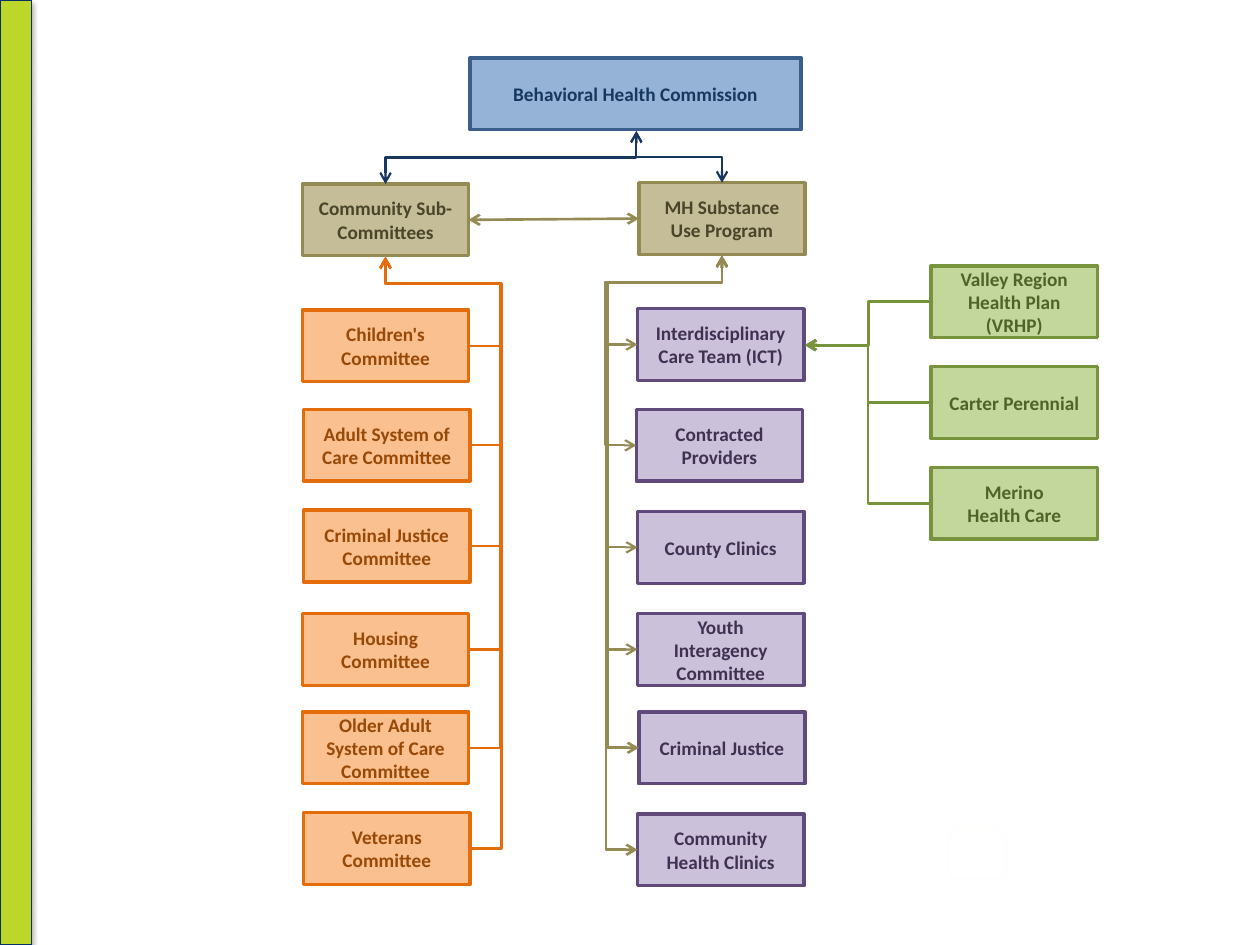
import pptx
import pptx.util
import pptx.dml.color
import pptx.enum.shapes
import pptx.enum.text
import pptx.oxml
import pptx.oxml.ns
import lxml.etree

Inches = pptx.util.Inches
Pt = pptx.util.Pt
RGBColor = pptx.dml.color.RGBColor
SHAPE = pptx.enum.shapes.MSO_SHAPE
CONNECTOR = pptx.enum.shapes.MSO_CONNECTOR
qn = pptx.oxml.ns.qn

WHITE = RGBColor(0xFF, 0xFF, 0xFF)
OFF_WHITE = RGBColor(0xFF, 0xFE, 0xFD)
LIME = RGBColor(0xBC, 0xD6, 0x2A)
DEEP_BLUE = RGBColor(0x05, 0x30, 0x66)
NAVY = RGBColor(0x17, 0x37, 0x5E)
TAN_LINE = RGBColor(0x94, 0x8A, 0x54)
ORANGE_LINE = RGBColor(0xE4, 0x6C, 0x0A)
GREEN_LINE = RGBColor(0x77, 0x93, 0x3C)

BLUE = (RGBColor(0x95, 0xB3, 0xD7), RGBColor(0x3A, 0x5F, 0x8C), NAVY)
TAN = (RGBColor(0xC4, 0xBD, 0x97), TAN_LINE, RGBColor(0x4A, 0x45, 0x2A))
ORANGE = (RGBColor(0xFA, 0xC0, 0x90), ORANGE_LINE, RGBColor(0x98, 0x48, 0x07))
PURPLE = (RGBColor(0xCC, 0xC1, 0xDA), RGBColor(0x60, 0x4A, 0x7B), RGBColor(0x40, 0x31, 0x52))
GREEN = (RGBColor(0xC3, 0xD6, 0x9B), GREEN_LINE, RGBColor(0x4F, 0x62, 0x28))

BOX_W, BOX_H = 1.32, 0.57
STUB = 0.25
DROP = 0.21

deck = pptx.Presentation()
deck.slide_width = Inches(10)
deck.slide_height = Inches(7.5)
slide = deck.slides.add_slide(deck.slide_layouts[6])


def add_box(left, top, lines, scheme, width=BOX_W, tight=False):
    fill, line, ink = scheme
    box = slide.shapes.add_shape(
        SHAPE.RECTANGLE, Inches(left), Inches(top), Inches(width), Inches(BOX_H))
    box.shadow.inherit = False
    box.fill.solid()
    box.fill.fore_color.rgb = fill
    box.line.color.rgb = line
    box.line.width = Pt(2)
    frame = box.text_frame
    frame.word_wrap = True
    frame.vertical_anchor = pptx.enum.text.MSO_ANCHOR.MIDDLE
    if tight:
        frame.margin_top = frame.margin_bottom = 0
    for index, text in enumerate(lines):
        paragraph = frame.add_paragraph() if index else frame.paragraphs[0]
        paragraph.alignment = pptx.enum.text.PP_ALIGN.CENTER
        run = paragraph.add_run()
        run.text = text
        run.font.name = "Calibri"
        run.font.size = Pt(11)
        run.font.bold = True
        run.font.color.rgb = ink
    return box


def add_link(kind, start, end, color, weight, ends):
    link = slide.shapes.add_connector(kind, *[Inches(value) for value in start + end])
    link.line.color.rgb = color
    link.line.width = Pt(weight)
    outline = link.line._get_or_add_ln()
    for tag in ends:
        lxml.etree.SubElement(outline, qn(tag), type="arrow")
    lxml.etree.SubElement(link.element.spPr, qn("a:effectLst"))
    return link


BOTH = ("a:headEnd", "a:tailEnd")
TAIL = ("a:tailEnd",)

corner = slide.shapes.add_shape(
    SHAPE.ROUNDED_RECTANGLE, Inches(7.53), Inches(6.58), Inches(0.45), Inches(0.4))
strip = slide.shapes.add_shape(SHAPE.RECTANGLE, 0, 0, Inches(0.25), Inches(7.5))
for panel, fill, line, weight in ((corner, WHITE, OFF_WHITE, 2), (strip, LIME, DEEP_BLUE, 0.75)):
    panel.shadow.inherit = False
    panel.fill.solid()
    panel.fill.fore_color.rgb = fill
    panel.line.color.rgb = line
    panel.line.width = Pt(weight)
shadow = lxml.etree.SubElement(
    strip.element.spPr.find(qn("a:effectLst")), qn("a:outerShdw"),
    blurRad=str(Pt(3.1)), dist=str(Pt(1.8)), dir="5400000", rotWithShape="0")
shade = lxml.etree.SubElement(shadow, qn("a:srgbClr"), val="000000")
lxml.etree.SubElement(shade, qn("a:alpha"), val="35000")

add_box(3.73, 0.46, ["Behavioral Health Commission"], BLUE, width=2.63)
program = add_box(5.07, 1.45, ["MH Substance Use Program"], TAN)
subcommittees = add_box(2.4, 1.46, ["Community Sub-Committees"], TAN)

top_x, top_y = 5.05, 1.04
for end_x, end_y in ((3.06, 1.46), (5.73, 1.45)):
    middle_x, middle_y = (top_x + end_x) / 2, (top_y + end_y) / 2
    side = 1 if end_x < top_x else -1
    half_w = side * (end_y - top_y) / 2
    half_h = abs(end_x - top_x) / 2
    branch = add_link(
        CONNECTOR.ELBOW, (middle_x - half_w, middle_y - half_h),
        (middle_x + half_w, middle_y + half_h), NAVY, 1.25, BOTH)
    branch.element.spPr.xfrm.set("rot", "5400000" if side == 1 else "16200000")

exchange = add_link(CONNECTOR.STRAIGHT, (3.72, 1.75), (5.07, 1.74), TAN_LINE, 1.5, BOTH)
exchange.begin_connect(subcommittees, 3)
exchange.end_connect(program, 1)

committees = [
    (2.4, 2.46, ["Children's Committee"], False, 1.25),
    (2.41, 3.25, ["Adult System of Care Committee"], False, 1.25),
    (2.41, 4.05, ["Criminal Justice Committee"], False, 1.25),
    (2.4, 4.87, ["Housing Committee"], False, 1.25),
    (2.4, 5.65, ["Older Adult System of Care Committee"], True, 1.25),
    (2.41, 6.45, ["Veterans Committee"], False, 1.5),
]
services = [
    (5.06, 2.45, ["Interdisciplinary Care Team (ICT)"], False, 1.25),
    (5.05, 3.25, ["Contracted Providers"], False, 1.25),
    (5.06, 4.06, ["County Clinics"], False, 1.25),
    (5.06, 4.87, ["Youth", "Interagency Committee"], True, 1.25),
    (5.07, 5.65, ["Criminal Justice"], False, 1.5),
    (5.06, 6.46, ["Community Health Clinics"], False, 1.5),
]
columns = [
    (committees, ORANGE, ORANGE_LINE, BOX_W, (3.06, 2.04), TAIL),
    (services, PURPLE, TAN_LINE, 0, (5.73, 2.03), BOTH),
]
for members, scheme, color, side_offset, target, ends in columns:
    for left, top, lines, tight, weight in members:
        add_box(left, top, lines, scheme, tight=tight)
        start = (left + side_offset, top + BOX_H / 2)
        link = add_link(CONNECTOR.ELBOW, start, target, color, weight, ends)
        geometry = link.element.spPr.find(qn("a:prstGeom"))
        geometry.set("prst", "bentConnector4")
        guides = geometry.find(qn("a:avLst"))
        if guides is None:
            guides = lxml.etree.SubElement(geometry, qn("a:avLst"))
        width, height = abs(target[0] - start[0]), start[1] - target[1]
        for name, share in (("adj1", -STUB / width), ("adj2", 1 - DROP / height)):
            lxml.etree.SubElement(
                guides, qn("a:gd"), name=name, fmla=f"val {round(share * 100000)}")

plans = [
    (2.11, ["Valley Region Health Plan (VRHP)"], True, 1.75),
    (2.91, ["Carter Perennial"], False, 1.5),
    (3.71, ["Merino", "Health Care"], False, 1.5),
]
for top, lines, tight, weight in plans:
    add_box(7.39, top, lines, GREEN, tight=tight)
    add_link(CONNECTOR.ELBOW, (7.39, top + BOX_H / 2), (6.39, 2.74), GREEN_LINE, weight, TAIL)

deck.save("out.pptx")
